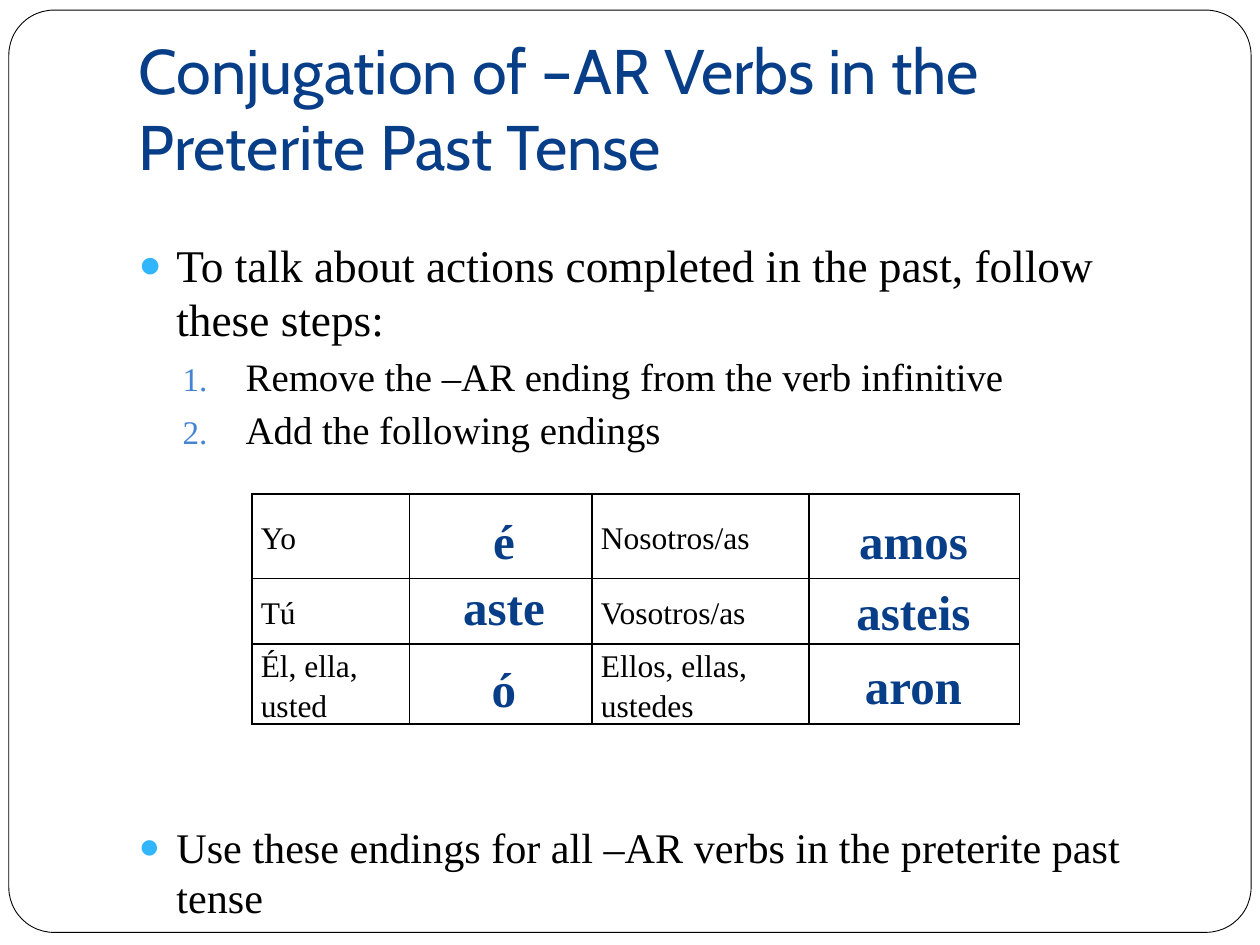
import pptx
import pptx.util
from lxml import etree
from pptx.dml.color import RGBColor
from pptx.enum.shapes import MSO_SHAPE
from pptx.enum.text import MSO_ANCHOR, MSO_AUTO_SIZE, PP_ALIGN
from pptx.oxml.ns import qn

Inches, Pt = pptx.util.Inches, pptx.util.Pt
SERIF, NAVY, BLACK = "Times New Roman", "073E87", "000000"


def color(code):
    return RGBColor.from_string(code)


def node(root, tag, **attrs):
    return etree.SubElement(root, qn(tag), attrs)


class Deck:
    def __init__(self, wide, high):
        self.prs = pptx.Presentation()
        self.prs.slide_width, self.prs.slide_height = Inches(wide), Inches(high)
        self.slide = self.prs.slides.add_slide(self.prs.slide_layouts[1])

    def place(self, shape, box):
        shape.left, shape.top, shape.width, shape.height = map(Inches, box)

    def style(self, par, size, tint=BLACK, face=SERIF, bold=False):
        font = par.font
        font.name, font.size, font.bold = face, Pt(size), bold
        font.color.rgb = color(tint)

    def frame(self, box, round_by):
        shape = self.slide.shapes.add_shape(
            MSO_SHAPE.ROUNDED_RECTANGLE, *map(Inches, box))
        shape.adjustments[0] = round_by
        shape.shadow.inherit = False
        shape.fill.solid()
        shape.fill.fore_color.rgb = color("FFFFFF")
        shape.line.color.rgb = color(BLACK)
        shape.line.width = Pt(0.5)
        # Behind the placeholders
        self.slide.shapes._spTree.insert(2, shape._element)

    def title(self, text, box):
        shape = self.slide.shapes.title
        self.place(shape, box)
        body = shape.text_frame
        body.text = text
        body.auto_size = MSO_AUTO_SIZE.NONE
        body.vertical_anchor = MSO_ANCHOR.BOTTOM
        body.margin_bottom = Inches(0.1)
        par = body.paragraphs[0]
        par.alignment = PP_ALIGN.LEFT
        self.style(par, 36, NAVY, "Cabin")

    def bullet(self, par, indent, hang, tint, face, tag, **mark):
        props = par._p.get_or_add_pPr()
        props.set("marL", str(Inches(indent)))
        props.set("indent", str(-Inches(hang)))
        node(node(props, "a:buClr"), "a:srgbClr", val=tint)
        node(props, "a:buSzPct", val="85000")
        node(props, "a:buFont", typeface=face)
        node(props, tag, **mark)

    def points(self, items, box):
        shape = self.slide.placeholders[1]
        self.place(shape, box)
        body = shape.text_frame
        body.auto_size = MSO_AUTO_SIZE.NONE
        body.vertical_anchor = MSO_ANCHOR.TOP
        for i, (text, level, size, gap) in enumerate(items):
            par = body.add_paragraph() if i else body.paragraphs[0]
            par.text, par.level, par.space_before = text, level, Pt(gap)
            if level:
                self.bullet(par, 0.85, 0.5, "4584D3", SERIF,
                            "a:buAutoNum", type="arabicPeriod")
            else:
                self.bullet(par, 0.3, 0.3, "31B6FD", "Arial",
                            "a:buChar", char="●")
            self.style(par, size)

    def cell(self, cell, text):
        cell.margin_left = cell.margin_right = Inches(0.07)
        cell.margin_top = cell.margin_bottom = 0
        cell.vertical_anchor = MSO_ANCHOR.MIDDLE
        props = cell._tc.get_or_add_tcPr()
        for side in "LRTB":
            line = node(props, "a:ln" + side, w=str(Pt(1)))
            node(node(line, "a:solidFill"), "a:srgbClr", val=BLACK)
        cell.fill.background()
        cell.text = text
        par = cell.text_frame.paragraphs[0]
        par.line_spacing, par.space_after = 1.15, Pt(10)
        self.style(par, 18)

    def table(self, rows, left, top, wides, highs):
        grid = self.slide.shapes.add_table(
            len(highs), len(wides), Inches(left), Inches(top),
            Inches(sum(wides)), Inches(sum(highs))).table
        grid.first_row = grid.horz_banding = False
        for col, wide in zip(grid.columns, wides):
            col.width = Inches(wide)
        for row, high, texts in zip(grid.rows, highs, rows):
            row.height = Inches(high)
            for cell, text in zip(row.cells, texts):
                self.cell(cell, text)

    def ending(self, text, mid, top, wide):
        shape = self.slide.shapes.add_textbox(
            *map(Inches, (mid - wide / 2, top, wide, 0.57)))
        body = shape.text_frame
        body.word_wrap = True
        body.auto_size = MSO_AUTO_SIZE.SHAPE_TO_FIT_TEXT
        par = body.paragraphs[0]
        par.text, par.alignment = text, PP_ALIGN.CENTER
        self.style(par, 28, NAVY, bold=True)


def main():
    deck = Deck(10, 7.5)
    deck.frame((0.07, 0.08, 9.86, 7.32), 0.049)
    deck.title("Conjugation of –AR Verbs in the Preterite Past Tense",
               (1, 0.3, 8.5, 1.25))

    # Steps; the wide gap before the last point leaves room for the table
    deck.points([
        ("To talk about actions completed in the past, follow these steps:",
         0, 25.9, 5.8),
        ("Remove the –AR ending from the verb infinitive", 1, 22.2, 3.7),
        ("Add the following endings", 1, 22.2, 3.7),
        ("Use these endings for all –AR verbs in the preterite past tense",
         0, 24.1, 211),
    ], (1, 1.83, 8.5, 5.33))

    # Pronouns
    deck.table([
        ("Yo", "", "Nosotros/as", ""),
        ("Tú", "", "Vosotros/as", ""),
        ("Él, ella, usted", "", "Ellos, ellas, ustedes", ""),
    ], 2, 3.92, (1.25, 1.45, 1.72, 1.67), (0.67, 0.52, 0.61))

    # Endings over the empty columns: text, top, width
    sides = {
        4: [("é", 4, 0.67), ("aste", 4.53, 1.17), ("ó", 5.18, 0.67)],
        7.25: [("amos", 4, 1.33), ("asteis", 4.57, 1.5), ("aron", 5.15, 1.33)],
    }
    for mid, ends in sides.items():
        for text, top, wide in ends:
            deck.ending(text, mid, top, wide)

    deck.prs.save("out.pptx")


if __name__ == "__main__":
    main()
